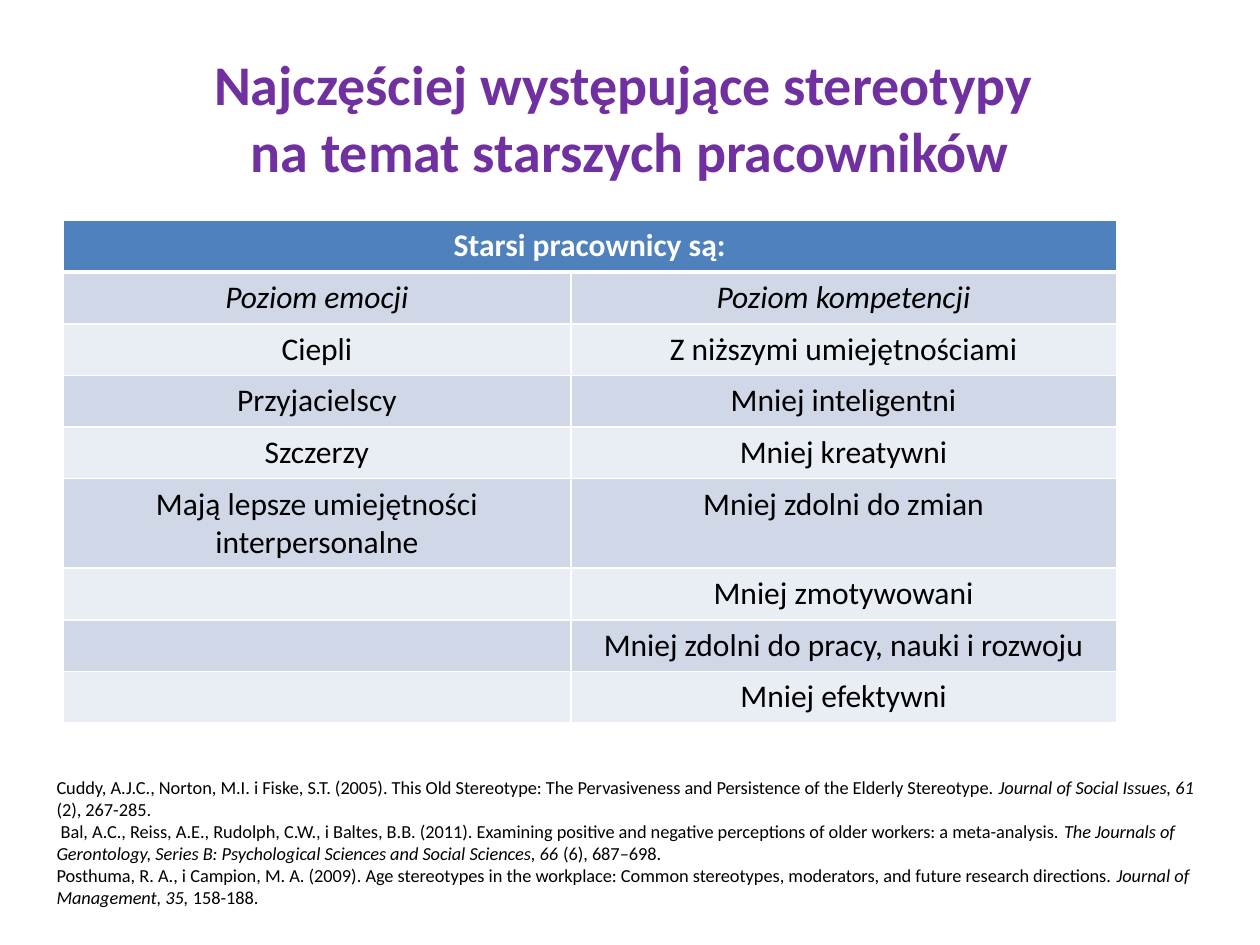
from lxml import etree
from pptx import Presentation
from pptx import util as u
from pptx.dml.color import RGBColor
from pptx.enum import text
from pptx.oxml import ns

PURPLE = RGBColor(0x70, 0x30, 0xA0)
BLUE = RGBColor(0x4F, 0x81, 0xBD)
DARK_BAND = RGBColor(0xD0, 0xD8, 0xE8)
LIGHT_BAND = RGBColor(0xE9, 0xED, 0xF4)
WHITE = RGBColor(0xFF, 0xFF, 0xFF)
BLACK = RGBColor(0, 0, 0)

TITLE = "Najczęściej występujące stereotypy \vna temat starszych pracowników"
ROWS = [
    ("Starsi pracownicy są:", ""),
    ("Poziom emocji", "Poziom kompetencji"),
    ("Ciepli", "Z niższymi umiejętnościami"),
    ("Przyjacielscy", "Mniej inteligentni"),
    ("Szczerzy", "Mniej kreatywni"),
    ("Mają lepsze umiejętności interpersonalne", "Mniej zdolni do zmian"),
    ("", "Mniej zmotywowani"),
    ("", "Mniej zdolni do pracy, nauki i rozwoju"),
    ("", "Mniej efektywni"),
]
COLUMN_WIDTHS = (4.03, 4.33)
ROW_HEIGHT = 0.41
REFERENCES = [
    ("Cuddy, A.J.C., Norton, M.I. i Fiske, S.T. (2005). This Old Stereotype: "
     "The Pervasiveness and Persistence of the Elderly Stereotype. ",
     "Journal of Social Issues, 61", " (2), 267-285."),
    (" Bal, A.C., Reiss, A.E., Rudolph, C.W., i Baltes, B.B. (2011). Examining "
     "positive and negative perceptions of older workers: a meta-analysis. ",
     "The Journals of Gerontology, Series B: Psychological Sciences and Social Sciences, 66 ",
     "(6), 687–698."),
    ("Posthuma, R. A., i Campion, M. A. (2009). Age stereotypes in the workplace: "
     "Common stereotypes, moderators, and future research directions. ",
     "Journal of Management, 35,", " 158-188."),
]
TITLE_FONT = dict(name="Calibri", size=u.Pt(32), bold=True)
TABLE_FONT = dict(name="Calibri", size=u.Pt(18))
REFERENCE_FONT = dict(name="Calibri", size=u.Pt(10.5))


def format_font(font, color, **values):
    for name, value in values.items():
        setattr(font, name, value)
    font.color.rgb = color


def add_borders(cell, **widths):
    properties = cell._tc.get_or_add_tcPr()
    for index, (side, width) in enumerate(widths.items()):
        line = etree.Element(ns.qn(f"a:ln{side}"), w=str(u.Pt(width)))
        fill = etree.SubElement(line, ns.qn("a:solidFill"))
        etree.SubElement(fill, ns.qn("a:srgbClr"), val=str(WHITE))
        properties.insert(index, line)


def add_title(page):
    title = page.shapes.title
    title.left, title.top, title.width, title.height = map(u.Inches, (0.5, 0.3, 9, 1.25))
    title.text_frame.text = TITLE
    title.text_frame.vertical_anchor = text.MSO_ANCHOR.MIDDLE
    para = title.text_frame.paragraphs[0]
    para.alignment = text.PP_ALIGN.CENTER
    for span in para.runs:
        format_font(span.font, PURPLE, **TITLE_FONT)


def add_stereotypes(page):
    table = page.shapes.add_table(
        len(ROWS), len(COLUMN_WIDTHS), u.Inches(0.5), u.Inches(1.75),
        u.Inches(sum(COLUMN_WIDTHS)), u.Inches(ROW_HEIGHT * len(ROWS))).table
    for column, width in zip(table.columns, COLUMN_WIDTHS):
        column.width = u.Inches(width)
    for r, labels in enumerate(ROWS):
        table.rows[r].height = u.Inches(ROW_HEIGHT)
        header = r == 0
        band = BLUE if header else DARK_BAND if r % 2 else LIGHT_BAND
        for c, label in enumerate(labels):
            cell = table.cell(r, c)
            cell.text = label
            cell.fill.solid()
            cell.fill.fore_color.rgb = band
            add_borders(cell, L=1, R=1, T=3 if r == 1 else 1, B=3 if header else 1)
            para = cell.text_frame.paragraphs[0]
            para.alignment = text.PP_ALIGN.CENTER
            for span in para.runs:
                format_font(span.font, WHITE if header else BLACK,
                            bold=header, italic=r == 1, **TABLE_FONT)
    table.cell(0, 0).merge(table.cell(0, 1))


def add_references(page):
    box = page.shapes.add_textbox(*map(u.Inches, (0.35, 6.11, 9.29, 1.16)))
    frame = box.text_frame
    frame.word_wrap = True
    frame.auto_size = text.MSO_AUTO_SIZE.SHAPE_TO_FIT_TEXT
    for index, parts in enumerate(REFERENCES):
        para = frame.add_paragraph() if index else frame.paragraphs[0]
        for part, italic in zip(parts, (False, True, False)):
            span = para.add_run()
            span.text = part
            format_font(span.font, BLACK, italic=italic, **REFERENCE_FONT)


def main():
    deck = Presentation()
    deck.slide_width, deck.slide_height = u.Inches(10), u.Inches(7.5)
    page = deck.slides.add_slide(deck.slide_layouts[5])
    add_title(page)
    add_stereotypes(page)
    add_references(page)
    deck.save("out.pptx")


if __name__ == "__main__":
    main()
